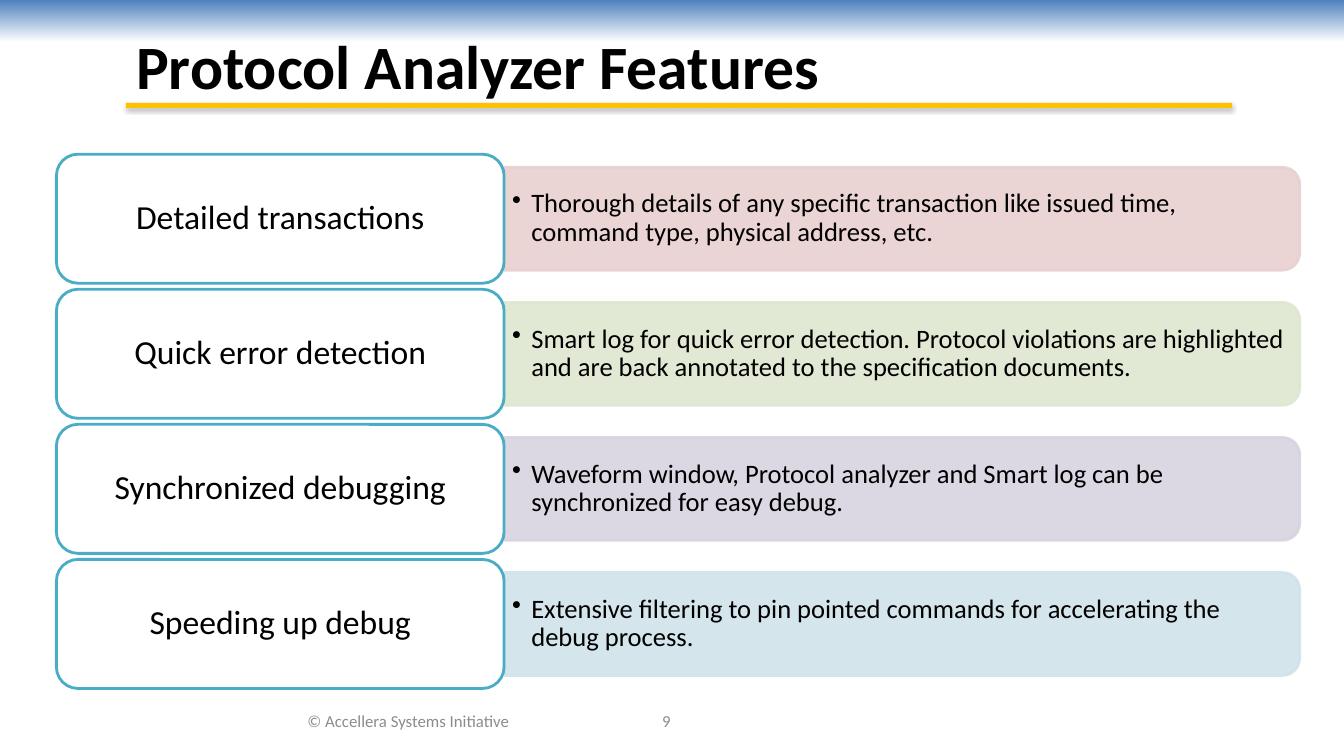
import pptx
import pptx.util
import pptx.oxml
import pptx.oxml.ns
from dataclasses import dataclass
from pptx.dml.color import RGBColor
from pptx.enum.shapes import MSO_SHAPE
from pptx.enum.text import MSO_ANCHOR, PP_ALIGN
from pptx.util import Inches, Pt


@dataclass(frozen=True)
class Theme:
    font: str = "Calibri"
    text: str = "000000"
    footer: str = "8C8C8C"
    white: str = "FFFFFF"
    band: str = "4F81BD"
    rule: str = "FFC000"
    label_line: str = "4BACC6"
    title_size: int = 44
    label_size: int = 24
    detail_size: int = 19
    footer_size: int = 12


theme = Theme()
NAMESPACE = pptx.oxml.ns.nsdecls("a")


def add_panel(kind, left, top, width, height, fill=None, line=None):
    panel = slide.shapes.add_shape(kind, Inches(left), Inches(top), Inches(width), Inches(height))
    panel.shadow.inherit = False
    if fill:
        panel.fill.solid()
        panel.fill.fore_color.rgb = RGBColor.from_string(fill)
    if line:
        panel.line.color.rgb = RGBColor.from_string(line)
        panel.line.width = Pt(2)
    else:
        panel.line.fill.background()
    return panel


def write_text(shape, text, size, color=theme.text, align=PP_ALIGN.CENTER, bold=False):
    """Fill a shape with one formatted, vertically centred paragraph and return it."""
    frame = shape.text_frame
    frame.text = text
    frame.word_wrap = True
    frame.vertical_anchor = MSO_ANCHOR.MIDDLE
    paragraph = frame.paragraphs[0]
    paragraph.alignment = align
    font = paragraph.runs[0].font
    font.name, font.size, font.bold = theme.font, Pt(size), bold
    font.color.rgb = RGBColor.from_string(color)
    return paragraph


presentation = pptx.Presentation()
presentation.slide_width, presentation.slide_height = Inches(13.33), Inches(7.5)
slide = presentation.slides.add_slide(presentation.slide_layouts[5])

# Top band, title and its underline
band = add_panel(MSO_SHAPE.RECTANGLE, 0, 0, 13.33, 0.42)
band.fill.gradient()
band.fill.gradient_angle = 270
for stop, color in zip(band.fill.gradient_stops, (theme.band, theme.white)):
    stop.color.rgb = RGBColor.from_string(color)

title = slide.shapes.title
title.left, title.top, title.width, title.height = map(Inches, (1.25, 0.21, 10.83, 0.86))
write_text(title, "Protocol Analyzer Features", theme.title_size, align=PP_ALIGN.LEFT, bold=True)

rule = add_panel(MSO_SHAPE.RECTANGLE, 1.25, 1.02, 10.97, 0.05, theme.rule)
effects = rule._element.spPr.find(pptx.oxml.ns.qn("a:effectLst"))
effects.append(pptx.oxml.parse_xml(
    f'<a:outerShdw {NAMESPACE} blurRad="{Pt(3.1)}" dist="{Pt(1.8)}" dir="5400000" rotWithShape="0">'
    '<a:srgbClr val="000000"><a:alpha val="35000"/></a:srgbClr></a:outerShdw>'))

# Feature rows: a label box beside a detail panel
features = [
    ("Detailed transactions", "E8D0D0",
     "Thorough details of any specific transaction like issued time, command type, "
     "physical address, etc."),
    ("Quick error detection", "DEE7D1",
     "Smart log for quick error detection. Protocol violations are highlighted and are "
     "back annotated to the specification documents."),
    ("Synchronized debugging", "D8D3E0",
     "Waveform window, Protocol analyzer and Smart log can be synchronized for easy debug."),
    ("Speeding up debug", "D0E3EA",
     "Extensive filtering to pin pointed commands for accelerating the debug process."),
]
ROW_TOP, ROW_PITCH = 1.53, 1.34
LABEL_LEFT, LABEL_WIDTH, LABEL_HEIGHT = 0.56, 4.44, 1.28
DETAIL_LEFT, DETAIL_LENGTH, DETAIL_THICKNESS = 5, 7.89, 1.02

for row, (label, color, detail) in enumerate(features):
    top = ROW_TOP + row * ROW_PITCH
    middle = top + LABEL_HEIGHT / 2

    # The panel stands upright before its quarter turn, so its rounded end faces right
    panel = add_panel(MSO_SHAPE.ROUND_2_SAME_RECTANGLE,
                      DETAIL_LEFT + (DETAIL_LENGTH - DETAIL_THICKNESS) / 2,
                      middle - DETAIL_LENGTH / 2,
                      DETAIL_THICKNESS, DETAIL_LENGTH, color, color)
    panel.rotation = 90
    for color_element in panel._element.spPr.iter(pptx.oxml.ns.qn("a:srgbClr")):
        color_element.append(pptx.oxml.parse_xml(f'<a:alpha {NAMESPACE} val="90000"/>'))

    detail_box = slide.shapes.add_textbox(
        Inches(DETAIL_LEFT), Inches(middle - 0.46), Inches(7.84), Inches(0.92))
    frame = detail_box.text_frame
    frame.margin_left = frame.margin_right = Inches(0.08)
    frame.margin_top = frame.margin_bottom = Inches(0.04)
    paragraph = write_text(detail_box, detail, theme.detail_size, align=PP_ALIGN.LEFT)
    properties = paragraph._p.get_or_add_pPr()
    properties.set("marL", str(Inches(0.19)))
    properties.set("indent", str(-Inches(0.19)))
    properties.append(pptx.oxml.parse_xml(f'<a:buChar {NAMESPACE} char="•"/>'))
    paragraph.line_spacing = 0.9

    label_box = add_panel(MSO_SHAPE.ROUNDED_RECTANGLE, LABEL_LEFT, top,
                          LABEL_WIDTH, LABEL_HEIGHT, theme.white, theme.label_line)
    write_text(label_box, label, theme.label_size).line_spacing = 0.9

# Footer
for text, left, width in (("© Accellera Systems Initiative", 2.44, 3.22), ("9", 5.33, 2.56)):
    footer = slide.shapes.add_textbox(Inches(left), Inches(6.95), Inches(width), Inches(0.4))
    write_text(footer, text, theme.footer_size, theme.footer)

presentation.save("out.pptx")
